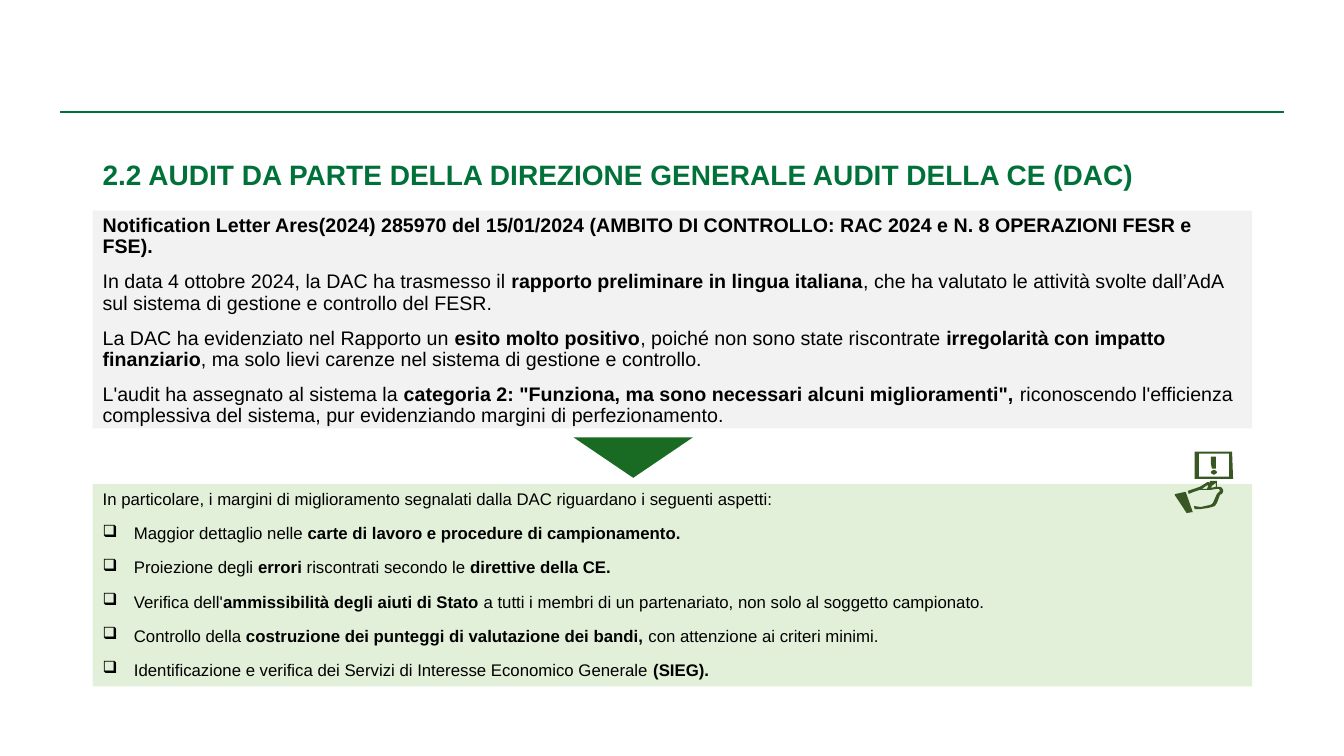
import pptx
import pptx.dml.color
import pptx.enum.shapes
import pptx.enum.text
import pptx.oxml
import pptx.oxml.ns
import pptx.util
from dataclasses import dataclass

Inches = pptx.util.Inches
Shape = pptx.enum.shapes.MSO_SHAPE
Anchor = pptx.enum.text.MSO_ANCHOR


@dataclass(frozen=True)
class Theme:
    font: str = "Arial"
    title_size: int = 20
    body_size: int = 14
    list_size: int = 12
    heading: str = "007239"
    text: str = "000000"
    grey_panel: str = "F2F2F2"
    green_panel: str = "E2F0D9"
    arrow: str = "196B24"
    icon: str = "385723"


LEFT, WIDTH = 0.92, 11.5

TITLE = "*2.2 AUDIT DA PARTE DELLA DIREZIONE GENERALE AUDIT DELLA CE (DAC)*"

# Asterisks enclose bold text.
FINDINGS = [
    "*Notification Letter Ares(2024) 285970 del 15/01/2024 (AMBITO DI CONTROLLO: "
    "RAC 2024 e N. 8 OPERAZIONI FESR e FSE).*",
    "In data 4 ottobre 2024, la DAC ha trasmesso il *rapporto preliminare in lingua italiana*, "
    "che ha valutato le attività svolte dall’AdA sul sistema di gestione e controllo del FESR.",
    "La DAC ha evidenziato nel Rapporto un *esito molto positivo*, poiché non sono state "
    "riscontrate *irregolarità con impatto finanziario*, ma solo lievi carenze nel sistema "
    "di gestione e controllo.",
    "L'audit ha assegnato al sistema la *categoria 2: \"Funziona, ma sono necessari alcuni "
    "miglioramenti\", *riconoscendo l'efficienza complessiva del sistema, pur evidenziando "
    "margini di perfezionamento.",
]

IMPROVEMENTS_INTRO = ("In particolare, i margini di miglioramento segnalati dalla DAC "
                      "riguardano i seguenti aspetti:")
IMPROVEMENTS = [
    "Maggior dettaglio nelle *carte di lavoro e procedure di campionamento.*",
    "Proiezione degli *errori* riscontrati secondo le *direttive della CE.*",
    "Verifica dell'*ammissibilità degli aiuti di Stato *a tutti i membri di un partenariato, "
    "non solo al soggetto campionato.",
    "Controllo della *costruzione dei punteggi di valutazione dei bandi,* con attenzione "
    "ai criteri minimi.",
    "Identificazione e verifica dei Servizi di Interesse Economico Generale *(SIEG).*",
]

# Outlines of the hand holding a sign, in hundredths of an inch on the slide.
CUFF = [(1165, 491), (1166, 490), (1176, 488), (1183, 508), (1177, 509)]
HAND = [(1200, 479), (1200, 477), (1207, 477), (1207, 483), (1210, 483), (1212, 484),
        (1213, 486), (1213, 488), (1212, 490), (1210, 491), (1207, 499), (1205, 502),
        (1202, 503), (1198, 504), (1191, 505), (1185, 505), (1184, 502), (1191, 503),
        (1200, 501), (1202, 500), (1203, 499), (1207, 490), (1209, 488), (1210, 487),
        (1209, 485), (1207, 485), (1201, 486), (1190, 486), (1184, 488), (1179, 490),
        (1178, 487), (1190, 483), (1198, 478)]
PALM_GAP = [(1197, 485), (1198, 483), (1198, 481), (1192, 485), (1190, 485)]
THUMB_GAP = [(1206, 483), (1206, 479), (1202, 482), (1201, 484)]
SIGN = [(1222, 448), (1223, 475), (1185, 475), (1185, 448)]
SIGN_INSIDE = [(1219, 450), (1189, 450), (1189, 473), (1219, 473)]
MARK = [(1206, 465), (1202, 465), (1201, 460), (1201, 453), (1206, 453), (1206, 460)]
DOT = [(1207, 469), (1206, 470), (1204, 471), (1202, 470), (1201, 469), (1201, 468),
       (1202, 467), (1204, 466), (1206, 467), (1207, 468)]


class SlideBuilder:
    def __init__(self, slide, theme):
        self.shapes = slide.shapes
        self.theme = theme

    def _paint(self, shape, color):
        shape.shadow.inherit = False
        shape.fill.solid()
        shape.fill.fore_color.rgb = pptx.dml.color.RGBColor.from_string(color)
        shape.line.fill.background()

    def rule(self, left, right, y):
        line = self.shapes.add_connector(
            pptx.enum.shapes.MSO_CONNECTOR.STRAIGHT,
            Inches(left), Inches(y), Inches(right), Inches(y))
        line.line.color.rgb = pptx.dml.color.RGBColor.from_string(self.theme.heading)
        line.line.width = pptx.util.Pt(1.5)
        line._element.spPr.append(pptx.oxml.parse_xml(
            f"<a:effectLst {pptx.oxml.ns.nsdecls('a')}/>"))

    def title(self, text, top, height):
        box = self.shapes.add_textbox(
            Inches(LEFT), Inches(top), Inches(WIDTH), Inches(height))
        box.text_frame.word_wrap = True
        box.text_frame.vertical_anchor = Anchor.MIDDLE
        self.paragraph(box, text, self.theme.title_size, self.theme.heading, spacing=0.9)

    def shape(self, preset, left, top, width, height, color):
        shape = self.shapes.add_shape(
            preset, Inches(left), Inches(top), Inches(width), Inches(height))
        self._paint(shape, color)
        return shape

    def panel(self, top, height, color):
        box = self.shape(Shape.RECTANGLE, LEFT, top, WIDTH, height, color)
        box.text_frame.word_wrap = True
        box.text_frame.vertical_anchor = Anchor.TOP
        return box

    def paragraph(self, box, text, size, color, spacing=1.0, before=0, after=0, bullet=None):
        """Add a paragraph to the box; asterisks in the text switch bold on and off."""
        frame = box.text_frame
        first = not frame.paragraphs[0].runs
        para = frame.paragraphs[0] if first else frame.add_paragraph()
        if bullet:
            properties = para._p.get_or_add_pPr()
            properties.set("marL", str(Inches(0.31)))
            properties.set("indent", str(Inches(-0.31)))
            properties.append(pptx.oxml.parse_xml(
                f'<a:buChar {pptx.oxml.ns.nsdecls("a")} char="{bullet}"/>'))
        para.alignment = pptx.enum.text.PP_ALIGN.LEFT
        para.line_spacing = spacing
        para.space_before = pptx.util.Pt(0 if first else before)
        para.space_after = pptx.util.Pt(after)
        for index, part in enumerate(text.split("*")):
            if part:
                span = para.add_run()
                span.text = part
                span.font.name = self.theme.font
                span.font.size = pptx.util.Pt(size)
                span.font.bold = index % 2 == 1
                span.font.color.rgb = pptx.dml.color.RGBColor.from_string(color)

    def icon(self, outlines, color):
        """Draw all outlines as one shape, so that inner outlines become holes."""
        builder = self.shapes.build_freeform(*outlines[0][0], scale=Inches(0.01))
        for index, outline in enumerate(outlines):
            if index:
                builder.move_to(*outline[0])
            builder.add_line_segments(outline[1:], close=True)
        self._paint(builder.convert_to_shape(), color)


def main():
    deck = pptx.Presentation()
    deck.slide_width, deck.slide_height = Inches(13.33), Inches(7.5)
    theme = Theme()
    page = SlideBuilder(deck.slides.add_slide(deck.slide_layouts[6]), theme)

    page.rule(0.6, 12.73, 1.11)
    page.title(TITLE, 1.42, 0.67)

    findings = page.panel(2.09, 2.16, theme.grey_panel)
    for text in FINDINGS:
        page.paragraph(findings, text, theme.body_size, theme.text, spacing=0.9, before=10)

    improvements = page.panel(4.8, 2.01, theme.green_panel)
    page.paragraph(improvements, IMPROVEMENTS_INTRO, theme.list_size, theme.text, after=4)
    for text in IMPROVEMENTS:
        page.paragraph(improvements, text, theme.list_size, theme.text,
                       before=6, after=4, bullet="❑")

    page.icon([CUFF, PALM_GAP, THUMB_GAP, HAND, SIGN, SIGN_INSIDE, MARK, DOT], theme.icon)
    arrow = page.shape(Shape.ISOSCELES_TRIANGLE, 5.69, 4.34, 1.18, 0.4, theme.arrow)
    arrow.rotation = 180
    deck.save("out.pptx")


if __name__ == "__main__":
    main()
